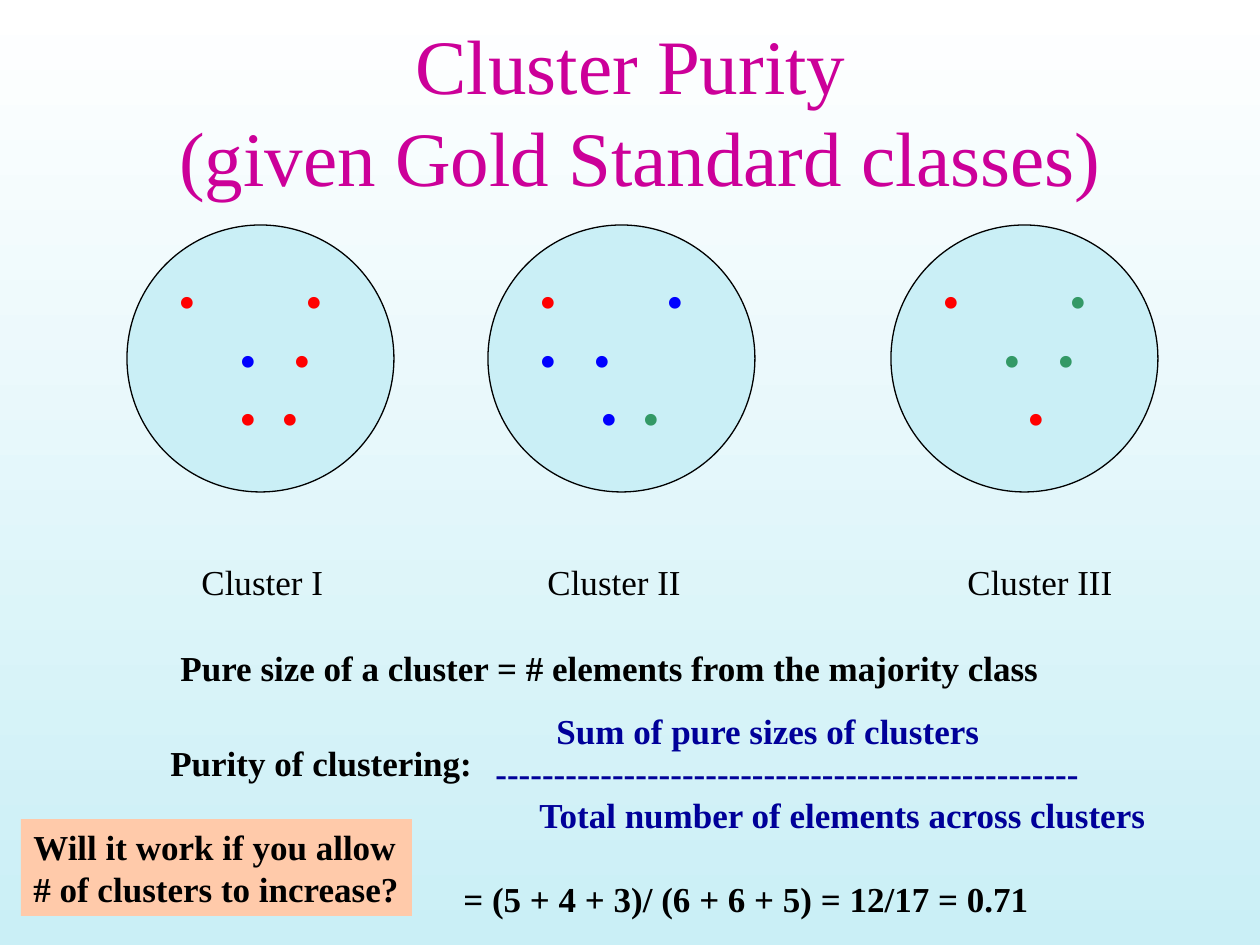
from lxml.etree import SubElement
from pptx import Presentation
from pptx.dml.color import RGBColor
from pptx.enum.shapes import MSO_SHAPE as Shape
from pptx.enum.text import MSO_ANCHOR as Anchor, MSO_AUTO_SIZE as AutoSize, PP_ALIGN as Align
from pptx.oxml.ns import qn
from pptx.util import Inches, Pt

PX = Inches(1) / 126
COLORS = {
    "title": "CC0099", "ink": "000000", "formula": "000099", "note": "FFCAAA",
    "white": "FFFFFF", "pale": "CAEFF6",
    "red": "FF0000", "blue": "0000FF", "green": "339966",
}


def px(*lengths):
    """Turn pixel lengths into a list of EMU."""
    return [round(length * PX) for length in lengths]


def style(para, size, color, bold=False, align=Align.LEFT):
    para.alignment = align
    para.font.name = "Times New Roman"
    para.font.size = Pt(size)
    para.font.bold = bold
    para.font.color.rgb = RGBColor.from_string(COLORS[color])


deck = Presentation()
deck.slide_width, deck.slide_height = px(1260, 945)
page = deck.slides.add_slide(deck.slide_layouts[5])

backdrop = page.background.fill
backdrop.gradient()
backdrop.gradient_angle = 270
for stop, color, position in zip(backdrop.gradient_stops, ("white", "pale"), (0, 1)):
    stop.color.rgb = RGBColor.from_string(COLORS[color])
    stop.position = position

title = page.shapes.title
title.left, title.top, title.width, title.height = px(105, 31, 1071, 157)
title.text_frame.text = "Cluster Purity \v(given Gold Standard classes)"
title.text_frame.auto_size = AutoSize.NONE
title.text_frame.vertical_anchor = Anchor.MIDDLE
style(title.text_frame.paragraphs[0], 44, "title", align=Align.CENTER)

# Each cluster: circle left, then rows of (dot offset, class color)
clusters = [
    (127, [[(0, "red"), (127, "red")],
           [(61, "blue"), (115, "red")],
           [(61, "red"), (103, "red")]]),
    (488, [[(0, "red"), (127, "blue")],
           [(0, "blue"), (54, "blue")],
           [(61, "blue"), (103, "green")]]),
    (891, [[(0, "red"), (127, "green")],
           [(61, "green"), (115, "green")],
           [(85, "red")]]),
]
for left, rows in clusters:
    circle = page.shapes.add_shape(Shape.OVAL, *px(left, 225, 267, 267))
    circle.shadow.inherit = False
    circle.fill.solid()
    circle.fill.fore_color.rgb = RGBColor.from_string(COLORS["pale"])
    circle.line.color.rgb = RGBColor.from_string(COLORS["ink"])
    circle.line.width = Pt(0.75)
    frame = circle.text_frame
    frame.vertical_anchor = Anchor.MIDDLE
    for index, dots in enumerate(rows):
        para = frame.add_paragraph() if index else frame.paragraphs[0]
        style(para, 28, dots[0][1])
        tabs = SubElement(para._p.get_or_add_pPr(), qn("a:tabLst"))
        # The default run properties must follow the tab list
        tabs.getparent().insert(0, tabs)
        for offset, color in dots:
            if offset:
                SubElement(tabs, qn("a:tab"), pos=str(px(offset)[0]), algn="l")
            span = para.add_run()
            span.text = "\t•" if offset else "•"
            span.font.color.rgb = RGBColor.from_string(COLORS[color])

# left, top, width, height, color, bold, lines of (indent, text)
texts = [
    (189, 554, 160, 54, "ink", False, [(0, "Cluster I")]),
    (535, 554, 183, 54, "ink", False, [(0, "Cluster II")]),
    (955, 554, 184, 54, "ink", False, [(0, "Cluster III")]),
    (158, 735, 338, 55, "ink", True, [(0, "Purity of clustering:")]),
    (483, 703, 697, 140, "formula", True,
     [(61, "Sum of pure sizes of clusters"),
      (0, "-" * 50),
      (44, "Total number of elements across clusters")]),
    (168, 640, 890, 55, "ink", True,
     [(0, "Pure size of a cluster = # elements from the majority class")]),
    (451, 871, 595, 55, "ink", True,
     [(0, "= (5 + 4 + 3)/ (6 + 6 + 5) = 12/17 = 0.71")]),
    (21, 819, 391, 97, "ink", True,
     [(0, "Will it work if you allow"), (0, "# of clusters to increase?")]),
]
for left, top, width, height, color, bold, lines in texts:
    box = page.shapes.add_textbox(*px(left, top, width, height))
    frame = box.text_frame
    frame.word_wrap = True
    for index, (indent, line) in enumerate(lines):
        para = frame.add_paragraph() if index else frame.paragraphs[0]
        para.text = line
        style(para, 20, color, bold)
        para._p.get_or_add_pPr().set("marL", str(px(indent)[0]))

# The last box is the question, set tight on a colored ground
frame.word_wrap = False
box.fill.solid()
box.fill.fore_color.rgb = RGBColor.from_string(COLORS["note"])

deck.save("out.pptx")
